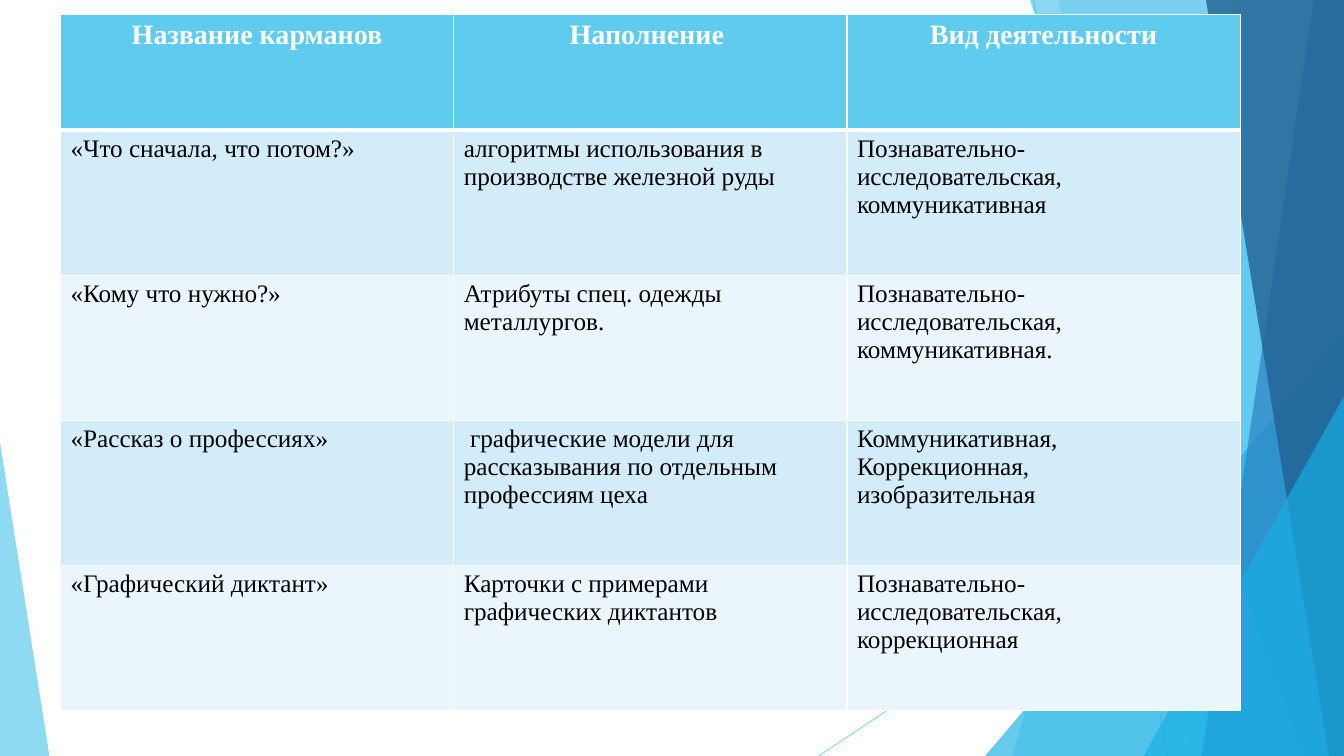
from lxml.etree import SubElement
from pptx import Presentation
from pptx.dml.color import RGBColor
from pptx.enum.shapes import MSO_CONNECTOR, MSO_SHAPE
from pptx.enum.text import PP_ALIGN
from pptx.oxml import parse_xml
from pptx.oxml.ns import nsdecls, qn
from pptx.util import Inches, Pt

ROWS = [
    ("Название карманов", "Наполнение ", "Вид деятельности"),
    ("«Что сначала, что потом?»",
     "алгоритмы использования в производстве железной руды",
     "Познавательно-исследовательская, коммуникативная"),
    ("«Кому что нужно?»",
     "Атрибуты спец. одежды металлургов.",
     "Познавательно-исследовательская, коммуникативная."),
    ("«Рассказ о профессиях»",
     " графические модели для рассказывания по отдельным профессиям цеха",
     "Коммуникативная,\nКоррекционная,\nизобразительная"),
    ("«Графический диктант»",
     "Карточки с примерами графических диктантов",
     "Познавательно-исследовательская, коррекционная"),
]
COLORS = {
    "sky": "5FCBEF", "cyan": "17B0E4", "blue": "2E83C3", "navy": "226292",
    "band_dark": "D2ECF9", "band_light": "EAF6FC",
    "white": "FFFFFF", "black": "000000",
}
WIDTH, HEIGHT = 13.33, 7.5
RAYS = [(10.25, 0, 11.58, HEIGHT), (WIDTH, 4.03, 8.12, HEIGHT)]
DECOR = [
    ("facet", (12.28, 10.04), "sky", 36),
    ("facet", (10.5, 11.83), "sky", 20),
    ("triangle", (9.77, 3.33, 3.56, 1), "cyan", 66),
    ("facet", (10.21, 12.91), "cyan", 50),
    ("facet", (13.03, 11.92), "blue", 70),
    ("facet", (11.96, 13.18), "navy", 80),
    ("triangle", (11.34, 3.93, 1.99, 1), "cyan", 66),
    ("triangle", (0, 4.39, 0.49, 0), "sky", 70),
]
TABLE_LEFT, TABLE_TOP, COL_WIDTH = 0.6, 0.14, 3.9
ROW_HEIGHTS = [1.15] + [1.44] * 4
HEADER = {"size": Pt(20), "bold": True, "name": "Times New Roman"}
BODY = {"size": Pt(18), "bold": False, "name": "Times New Roman"}


def rgb(name):
    return RGBColor.from_string(COLORS[name])


def set_alpha(sp, percent):
    clr = next(sp._element.spPr.iter(qn("a:srgbClr")))
    SubElement(clr, qn("a:alpha")).set("val", str(percent * 1000))


def add_ray(s, ends):
    sp = s.shapes.add_connector(MSO_CONNECTOR.STRAIGHT, *map(Inches, ends))
    sp.line.color.rgb = rgb("sky")
    sp.line.width = Pt(0.75)
    set_alpha(sp, 70)
    SubElement(sp._element.spPr, qn("a:effectLst"))


def facet(s, top_x, bottom_x):
    points = [(top_x, -0.01), (WIDTH, -0.01), (WIDTH, HEIGHT), (bottom_x, HEIGHT)]
    start, *rest = [(Inches(x), Inches(y)) for x, y in points]
    fb = s.shapes.build_freeform(*start)
    fb.add_line_segments(rest, close=True)
    return fb.convert_to_shape()


def triangle(s, left, top, width, apex):
    box = map(Inches, (left, top, width, HEIGHT - top))
    sp = s.shapes.add_shape(MSO_SHAPE.ISOSCELES_TRIANGLE, *box)
    sp.adjustments[0] = apex
    return sp


def add_decor(s, kind, geometry, color, alpha):
    sp = {"facet": facet, "triangle": triangle}[kind](s, *geometry)
    sp.shadow.inherit = False
    sp.fill.solid()
    sp.fill.fore_color.rgb = rgb(color)
    sp.line.fill.background()
    set_alpha(sp, alpha)


def set_borders(cell, bottom):
    widths = {"lnL": 1, "lnR": 1, "lnT": 1, "lnB": bottom}
    for i, (tag, width) in enumerate(widths.items()):
        cell._tc.get_or_add_tcPr().insert(i, parse_xml(
            f'<a:{tag} {nsdecls("a")} w="{Pt(width)}"><a:solidFill>'
            f'<a:srgbClr val="{COLORS["white"]}"/></a:solidFill></a:{tag}>'))


def fill_cell(cell, text, row):
    header = row == 0
    band = "band_dark" if row % 2 else "band_light"
    cell.text = text
    cell.fill.solid()
    cell.fill.fore_color.rgb = rgb("sky" if header else band)
    set_borders(cell, 3 if header else 1)
    for p in cell.text_frame.paragraphs:
        p.alignment = PP_ALIGN.CENTER if header else PP_ALIGN.LEFT
        for r in p.runs:
            for key, value in (HEADER if header else BODY).items():
                setattr(r.font, key, value)
            r.font.color.rgb = rgb("white" if header else "black")


def add_pockets_table(s):
    cols = len(ROWS[0])
    box = map(Inches, (TABLE_LEFT, TABLE_TOP, COL_WIDTH * cols, sum(ROW_HEIGHTS)))
    table = s.shapes.add_table(len(ROWS), cols, *box).table
    for col in table.columns:
        col.width = Inches(COL_WIDTH)
    for i, (texts, height) in enumerate(zip(ROWS, ROW_HEIGHTS)):
        table.rows[i].height = Inches(height)
        for j, text in enumerate(texts):
            fill_cell(table.cell(i, j), text, i)


def main():
    prs = Presentation()
    prs.slide_width, prs.slide_height = Inches(WIDTH), Inches(HEIGHT)
    s = prs.slides.add_slide(prs.slide_layouts[6])
    for ends in RAYS:
        add_ray(s, ends)
    for item in DECOR:
        add_decor(s, *item)
    add_pockets_table(s)
    prs.save("out.pptx")


if __name__ == "__main__":
    main()
